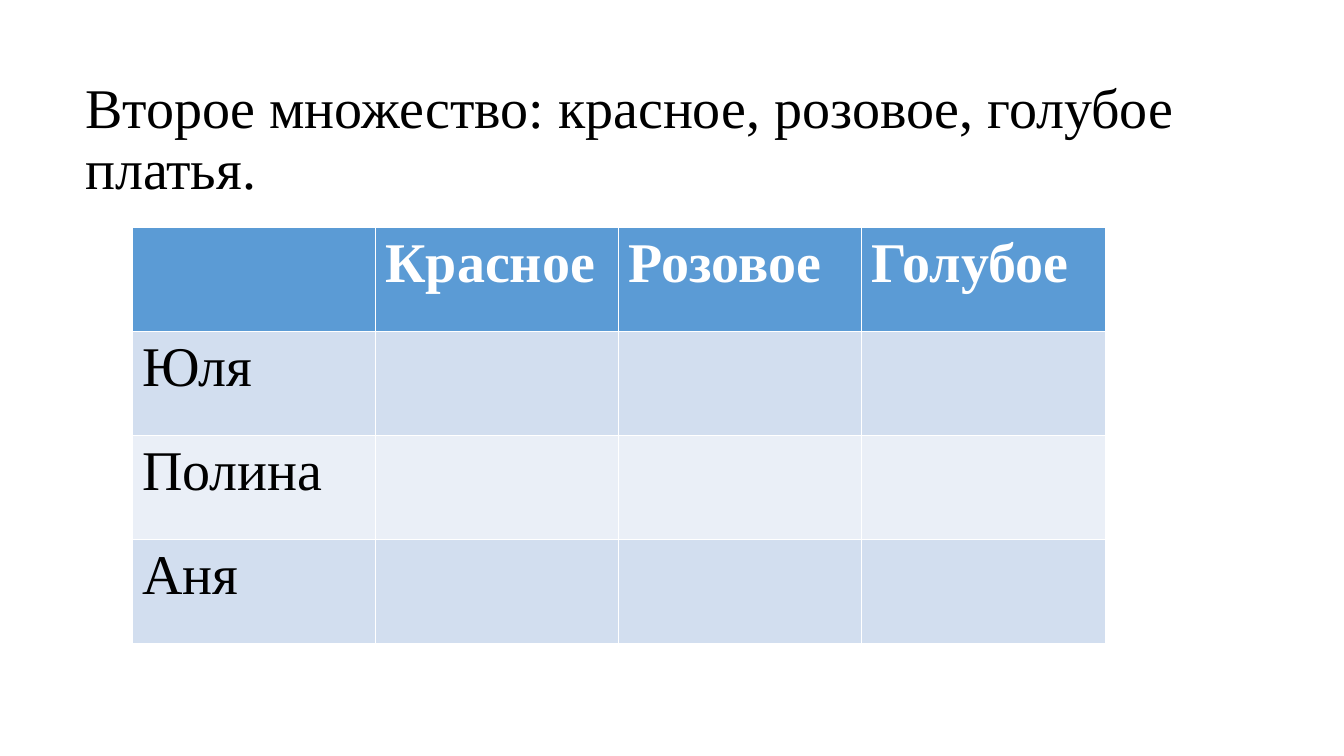
import pptx
import pptx.util
import pptx.dml.color
from pptx.util import Cm, Pt
from pptx.dml.color import RGBColor

# Content
TITLE = "Второе множество: красное, розовое, голубое платья."
DRESSES = ["Красное", "Розовое", "Голубое"]
GIRLS = ["Юля", "Полина", "Аня"]
ROWS = [["", *DRESSES]] + [[girl] + [""] * len(DRESSES) for girl in GIRLS]

# Style
FONT = "Times New Roman"
SIZE = Pt(40)
BLACK = RGBColor(0x00, 0x00, 0x00)
WHITE = RGBColor(0xFF, 0xFF, 0xFF)
HEADER_BLUE = RGBColor(0x5B, 0x9B, 0xD5)
BANDS = [RGBColor(0xEA, 0xEF, 0xF7), RGBColor(0xD2, 0xDE, 0xEF)]

# Layout
COLUMN_WIDTH = Cm(6.13)
ROW_HEIGHT = Cm(2.62)


def format_text(paragraph, color, bold=False):
    for item in [paragraph, *paragraph.runs]:
        item.font.name = FONT
        item.font.size = SIZE
        item.font.bold = bold
        item.font.color.rgb = color


presentation = pptx.Presentation()
presentation.slide_width = Cm(33.87)
presentation.slide_height = Cm(19.05)
slide = presentation.slides.add_slide(presentation.slide_layouts[6])

# Title text
title = slide.shapes.add_textbox(Cm(1.9), Cm(1.9), Cm(31.45), Cm(10.03))
title.text_frame.word_wrap = True
title.text_frame.text = TITLE
paragraph = title.text_frame.paragraphs[0]
paragraph.line_spacing = 0.9
paragraph.space_before = Pt(10)
format_text(paragraph, BLACK)

# Table: the default style draws the white cell borders
table = slide.shapes.add_table(
    len(ROWS), len(ROWS[0]), Cm(3.33), Cm(5.73),
    COLUMN_WIDTH * len(ROWS[0]), ROW_HEIGHT * len(ROWS)).table
for column in table.columns:
    column.width = COLUMN_WIDTH
for row_index, texts in enumerate(ROWS):
    table.rows[row_index].height = ROW_HEIGHT
    is_header = row_index == 0
    for column_index, text in enumerate(texts):
        cell = table.cell(row_index, column_index)
        cell.text_frame.text = text
        cell.fill.solid()
        cell.fill.fore_color.rgb = HEADER_BLUE if is_header else BANDS[row_index % 2]
        format_text(cell.text_frame.paragraphs[0], WHITE if is_header else BLACK, is_header)

presentation.save("out.pptx")
